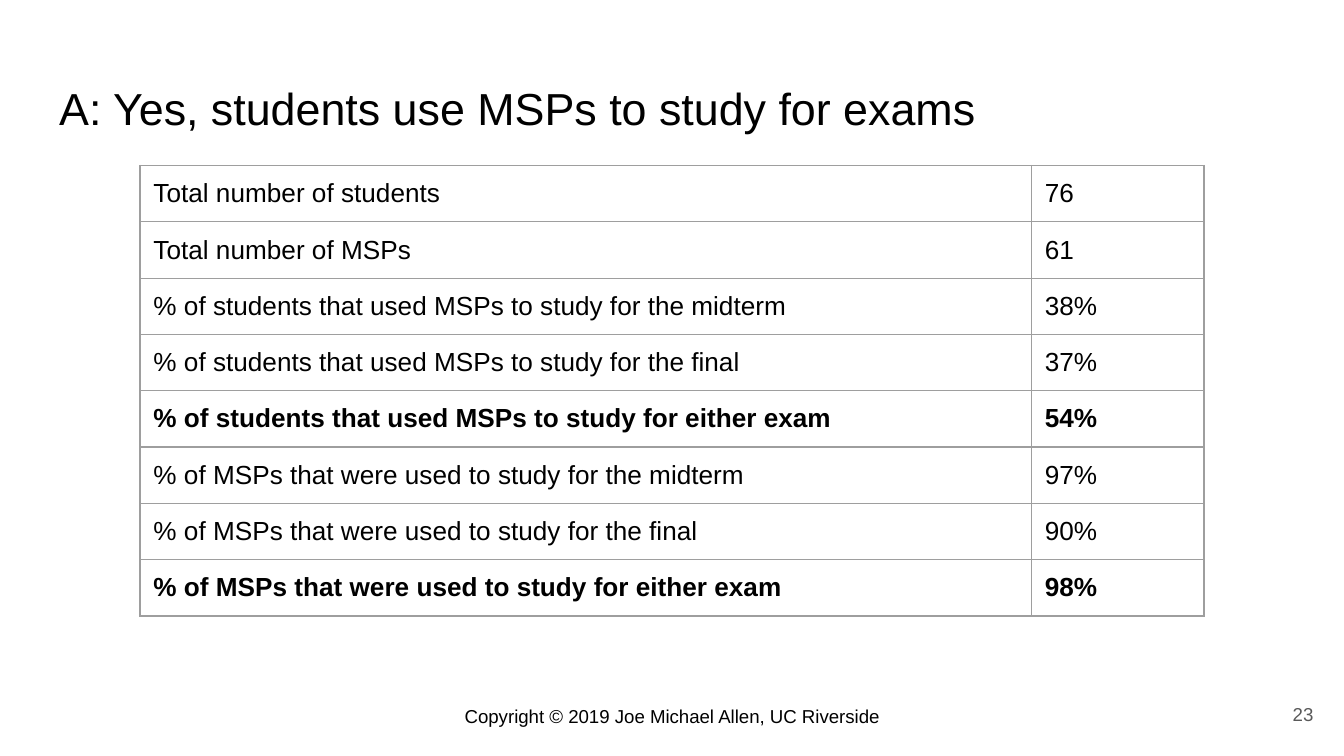
from dataclasses import dataclass

from lxml import etree
from pptx import Presentation
from pptx.dml.color import RGBColor
from pptx.enum import text as tx
from pptx.oxml import ns
from pptx.util import Pt


@dataclass(frozen=True)
class Theme:
    font: str = "Arial"
    ink: str = "000000"
    grey: str = "595959"
    rule: str = "9E9E9E"
    head: int = 24
    cell: int = 14
    small: int = 10
    pad: float = 7.2
    line: float = 0.75


THEME = Theme()

ROWS = [
    ("Total number of students", "76"),
    ("Total number of MSPs", "61"),
    ("% of students that used MSPs to study for the midterm", "38%"),
    ("% of students that used MSPs to study for the final", "37%"),
    ("% of students that used MSPs to study for either exam", "54%"),
    ("% of MSPs that were used to study for the midterm", "97%"),
    ("% of MSPs that were used to study for the final", "90%"),
    ("% of MSPs that were used to study for either exam", "98%"),
]


def style(frame, size, color=THEME.ink, bold=False, align=tx.PP_ALIGN.LEFT):
    for par in frame.paragraphs:
        par.alignment = align
        for run in par.runs:
            font = run.font
            font.name, font.size, font.bold = THEME.font, Pt(size), bold
            font.color.rgb = RGBColor.from_string(color)


def pad(item):
    item.margin_left = item.margin_right = Pt(THEME.pad)
    item.margin_top = item.margin_bottom = Pt(THEME.pad)


def border(cell):
    props = cell._tc.get_or_add_tcPr()
    # Borders must precede the fill
    for place, side in enumerate(("lnL", "lnR", "lnT", "lnB")):
        line = etree.Element(ns.qn(f"a:{side}"), w=str(Pt(THEME.line)))
        fill = etree.SubElement(line, ns.qn("a:solidFill"))
        etree.SubElement(fill, ns.qn("a:srgbClr"), val=THEME.rule)
        props.insert(place, line)


def add_title(slide, box, words):
    title = slide.shapes.title
    title.left, title.top, title.width, title.height = map(Pt, box)
    frame = title.text_frame
    frame.text = words
    frame.word_wrap = True
    frame.auto_size = tx.MSO_AUTO_SIZE.NONE
    frame.vertical_anchor = tx.MSO_ANCHOR.MIDDLE
    pad(frame)
    style(frame, THEME.head)


def add_grid(slide, box, rows, split):
    left, top, width, height = box
    table = slide.shapes.add_table(len(rows), 2, *map(Pt, box)).table
    table.first_row = table.horz_banding = False
    table.columns[0].width = Pt(split)
    table.columns[1].width = Pt(width - split)
    for row, words in zip(table.rows, rows):
        row.height = Pt(height / len(rows))
        for cell, word in zip(row.cells, words):
            cell.text_frame.text = word
            cell.fill.background()
            pad(cell)
            border(cell)
            # Totals over both exams stand out
            style(cell.text_frame, THEME.cell, bold="either" in words[0])


def add_note(slide, box, words, color, align, anchor):
    frame = slide.shapes.add_textbox(*map(Pt, box)).text_frame
    frame.text = words
    frame.word_wrap = True
    frame.vertical_anchor = anchor
    pad(frame)
    style(frame, THEME.small, color, align=align)


def main():
    deck = Presentation()
    deck.slide_width, deck.slide_height = Pt(720), Pt(405)
    slide = deck.slides.add_slide(deck.slide_layouts[5])

    # Heading
    add_title(slide, (24.5, 35, 671, 45.5),
              "A: Yes, students use MSPs to study for exams")
    # Study results
    add_grid(slide, (75, 88.7, 570, 240), ROWS, 477.5)
    # Footer and page number
    add_note(slide, (196.5, 371.5, 327, 27),
             "Copyright © 2019 Joe Michael Allen, UC Riverside",
             THEME.ink, tx.PP_ALIGN.CENTER, tx.MSO_ANCHOR.TOP)
    add_note(slide, (667.5, 367.2, 43.2, 31), "23",
             THEME.grey, tx.PP_ALIGN.RIGHT, tx.MSO_ANCHOR.MIDDLE)

    deck.save("out.pptx")


if __name__ == "__main__":
    main()
